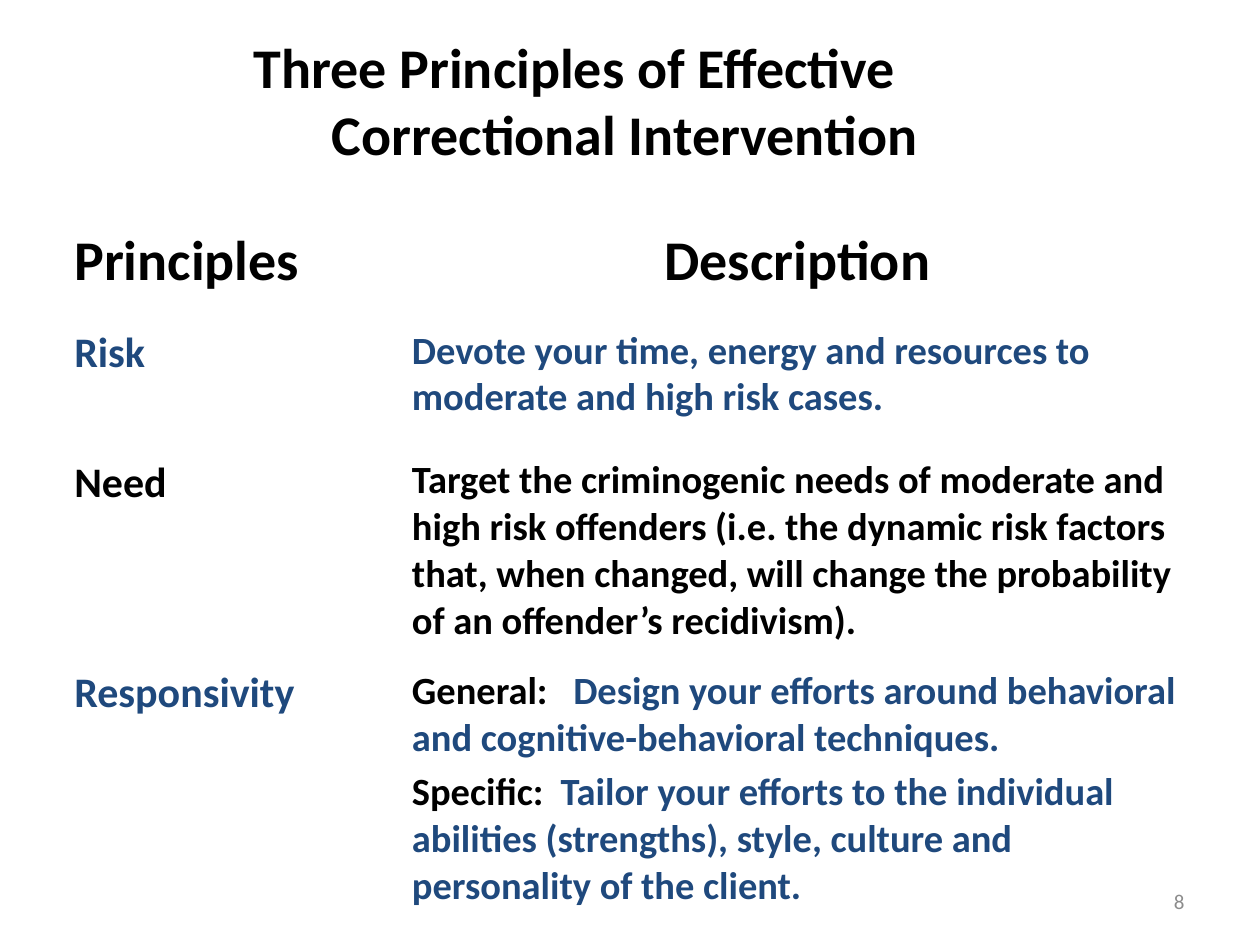
from lxml import etree
from pptx import Presentation
from pptx.dml.color import RGBColor
from pptx.enum.text import MSO_ANCHOR, PP_ALIGN
from pptx.oxml.ns import qn
from pptx.util import Inches, Pt

MIDDLE = MSO_ANCHOR.MIDDLE
LEFT, CENTER, RIGHT = PP_ALIGN.LEFT, PP_ALIGN.CENTER, PP_ALIGN.RIGHT

FONT = "Calibri"
COLORS = {"black": "000000", "blue": "1F497D", "gray": "8C8C8C", "white": "FFFFFF"}

TITLE = "Three Principles of Effective\vCorrectional Intervention"
PAGE_NUMBER = "8"
HEADINGS = [("Principles", LEFT), ("Description ", CENTER)]
PRINCIPLES = [
    ("Risk", "blue", [
        ("", 0, "Devote your time, energy and resources to moderate and high risk cases."),
    ]),
    ("Need", "black", [
        ("", 0, "Target the criminogenic needs of moderate and high risk offenders "
                "(i.e. the dynamic risk factors that, when changed, will change the "
                "probability of an offender’s recidivism)."),
    ]),
    ("Responsivity", "blue", [
        ("General:", 1.28, "Design your efforts around behavioral and "
                           "cognitive-behavioral techniques."),
        ("Specific:", 1.18, "Tailor your efforts to the individual abilities (strengths), "
                            "style, culture and personality of the client."),
    ]),
]
COLUMN_WIDTHS = [2.68, 6.4]
ROW_HEIGHTS = [0.8, 1.03, 1.67, 1.57]
TITLE_STAGGER = 0.8
NAME_INDENT = 0.58


def style_run(run, size, color, bold=True):
    run.font.name = FONT
    run.font.size = Pt(size)
    run.font.bold = bold
    run.font.color.rgb = RGBColor.from_string(COLORS[color])


def hang(paragraph, indent):
    properties = paragraph._p.get_or_add_pPr()
    properties.set("marL", str(Inches(indent)))
    properties.set("indent", str(-Inches(indent)))


def space_before(paragraph):
    spacing = etree.SubElement(paragraph._p.get_or_add_pPr(), qn("a:spcBef"))
    etree.SubElement(spacing, qn("a:spcPct"), val="20000")


def add_tab_stop(paragraph, position):
    stops = etree.SubElement(paragraph._p.get_or_add_pPr(), qn("a:tabLst"))
    etree.SubElement(stops, qn("a:tab"), pos=str(Inches(position)), algn="l")


def style_cell(cell):
    cell.margin_left = cell.margin_right = Inches(0.09)
    cell.margin_top = cell.margin_bottom = Inches(0.05)
    properties = cell._tc.get_or_add_tcPr()
    for side in ("lnL", "lnR", "lnT", "lnB"):
        border = etree.SubElement(properties, qn(f"a:{side}"), w=str(Pt(1)))
        fill = etree.SubElement(border, qn("a:solidFill"))
        etree.SubElement(fill, qn("a:srgbClr"), val=COLORS["white"])
    cell.fill.background()


def add_text(slide, text, place, size, color, bold, align):
    box = slide.shapes.add_textbox(*map(Inches, place))
    frame = box.text_frame
    frame.word_wrap = True
    frame.vertical_anchor = MIDDLE
    frame.text = text
    paragraph = frame.paragraphs[0]
    paragraph.alignment = align
    for run in paragraph.runs:
        style_run(run, size, color, bold)
    return frame


def fill_cell(cell, text, size, color, align=LEFT, indent=0):
    cell.text_frame.text = text
    paragraph = cell.text_frame.paragraphs[0]
    paragraph.alignment = align
    if indent:
        hang(paragraph, indent)
    space_before(paragraph)
    style_run(paragraph.runs[0], size, color)


def fill_description(cell, color, parts):
    frame = cell.text_frame
    for index, (label, tab, description) in enumerate(parts):
        paragraph = frame.paragraphs[0] if index == 0 else frame.add_paragraph()
        space_before(paragraph)
        if label:
            add_tab_stop(paragraph, tab)
            label_run = paragraph.add_run()
            label_run.text = label + "\t"
            style_run(label_run, 22, "black")
        description_run = paragraph.add_run()
        description_run.text = description
        style_run(description_run, 22, color)


def main():
    prs = Presentation()
    prs.slide_width, prs.slide_height = Inches(10), Inches(7.5)
    slide = prs.slides.add_slide(prs.slide_layouts[6])

    add_text(slide, PAGE_NUMBER, (7.17, 6.95, 2.33, 0.4), 12, "gray", False, RIGHT)
    title = add_text(slide, TITLE, (0.75, 0.25, 8.42, 1.08), 32, "black", True, CENTER)
    title.margin_right = Inches(0.1 + TITLE_STAGGER)
    hang(title.paragraphs[0], TITLE_STAGGER)

    table = slide.shapes.add_table(
        len(ROW_HEIGHTS), len(COLUMN_WIDTHS), Inches(0.5), Inches(1.75),
        Inches(sum(COLUMN_WIDTHS)), Inches(sum(ROW_HEIGHTS))).table
    for column, width in zip(table.columns, COLUMN_WIDTHS):
        column.width = Inches(width)
    for row, height in zip(table.rows, ROW_HEIGHTS):
        row.height = Inches(height)
    for cell in table.iter_cells():
        style_cell(cell)

    for column, (heading, align) in enumerate(HEADINGS):
        fill_cell(table.cell(0, column), heading, 32, "black", align)
    for row, (name, color, parts) in enumerate(PRINCIPLES, start=1):
        fill_cell(table.cell(row, 0), name, 24, color, indent=NAME_INDENT)
        fill_description(table.cell(row, 1), color, parts)

    prs.save("out.pptx")


if __name__ == "__main__":
    main()
